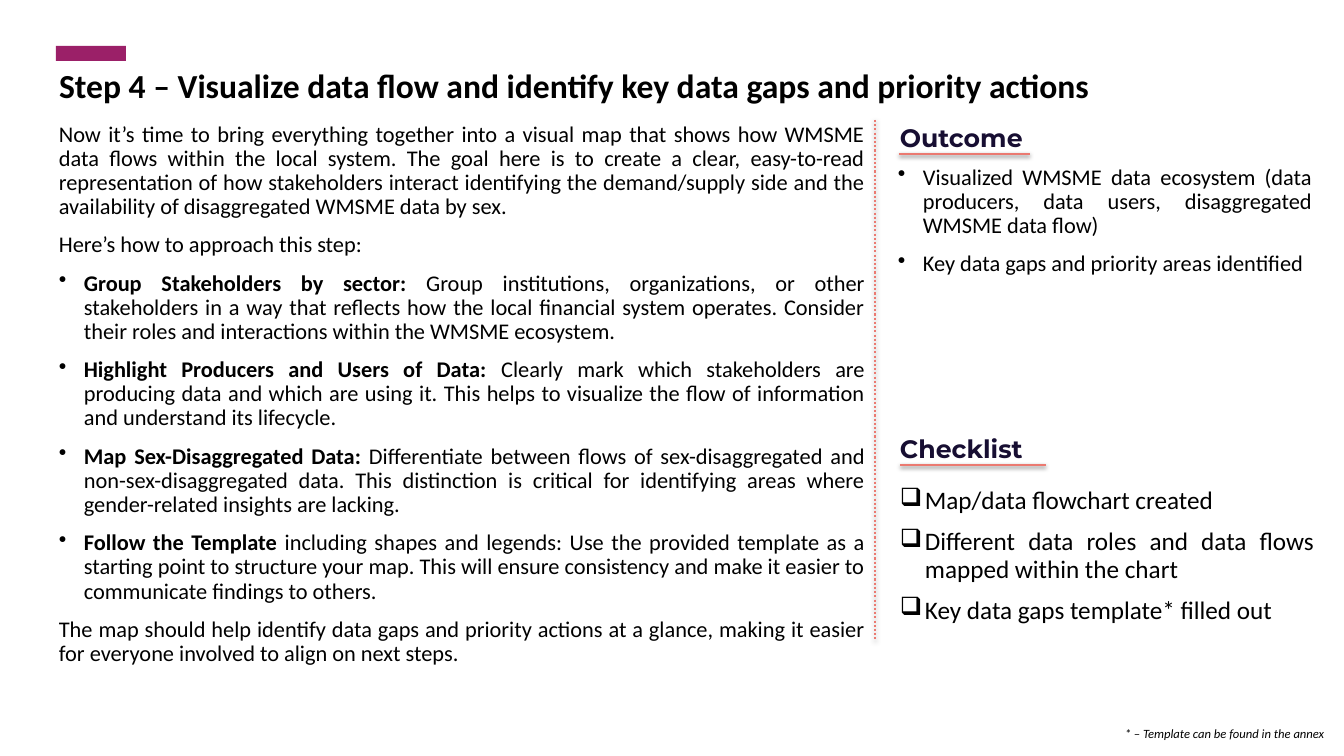
"""Build the Step 4 slide on visualizing data flow and identifying data gaps."""
from lxml.etree import SubElement
from pptx import Presentation
from pptx.dml.color import RGBColor
from pptx.enum.dml import MSO_LINE
from pptx.enum.shapes import MSO_CONNECTOR, MSO_SHAPE
from pptx.enum.text import MSO_ANCHOR, MSO_AUTO_SIZE, PP_ALIGN
from pptx.oxml.ns import qn
from pptx.util import Emu, Pt

EMU_PER_PX = 914400 / 100.8
INDENT = 25
BLACK, NAVY, CORAL, PLUM = "000000", "170E32", "EB7A71", "9B2068"

TITLE = "Step 4 – Visualize data flow and identify key data gaps and priority actions"
STEPS = [
    ("", "", "Now it’s time to bring everything together into a visual map that shows "
     "how WMSME data flows within the local system. The goal here is to create a clear, "
     "easy-to-read representation of how stakeholders interact identifying the "
     "demand/supply side and the availability of disaggregated WMSME data by sex."),
    ("", "", "Here’s how to approach this step:"),
    ("•", "Group Stakeholders by sector:", " Group institutions, organizations, or other "
     "stakeholders in a way that reflects how the local financial system operates. "
     "Consider their roles and interactions within the WMSME ecosystem."),
    ("•", "Highlight Producers and Users of Data:", " Clearly mark which stakeholders are "
     "producing data and which are using it. This helps to visualize the flow of "
     "information and understand its lifecycle."),
    ("•", "Map Sex-Disaggregated Data:", " Differentiate between flows of "
     "sex-disaggregated and non-sex-disaggregated data. This distinction is critical for "
     "identifying areas where gender-related insights are lacking."),
    ("•", "Follow the Template", " including shapes and legends: Use the provided template "
     "as a starting point to structure your map. This will ensure consistency and make it "
     "easier to communicate findings to others."),
    ("", "", "The map should help identify data gaps and priority actions at a glance, "
     "making it easier for everyone involved to align on next steps."),
]
OUTCOMES = [
    ("•", "", "Visualized WMSME data ecosystem (data producers, data users, "
     "disaggregated WMSME data flow)"),
    ("•", "", "Key data gaps and priority areas identified"),
]
CHECKS = [
    ("❑", "", "Map/data flowchart created"),
    ("❑", "", "Different data roles and data flows mapped within the chart"),
    ("❑", "", "Key data gaps template* filled out"),
]


def px(n):
    """Turn pixels into EMU."""
    return Emu(round(n * EMU_PER_PX))


def rgb(color):
    """Turn a hex string into a colour."""
    return RGBColor.from_string(color)


def style(font, size, color=BLACK, name="Calibri", bold=False, italic=False):
    """Format a font."""
    font.name, font.size, font.bold, font.italic = name, Pt(size), bold, italic
    font.color.rgb = rgb(color)


def add_bullet(p, char):
    """Give a paragraph a hanging bullet."""
    pPr = p._p.get_or_add_pPr()
    pPr.set("marL", str(px(INDENT)))
    pPr.set("indent", str(-px(INDENT)))
    SubElement(pPr, qn("a:buChar")).set("char", char)


def add_box(s, x, y, w, h):
    """Add a wrapping text box and return its text frame."""
    tf = s.shapes.add_textbox(px(x), px(y), px(w), px(h)).text_frame
    tf.word_wrap = True
    return tf


def add_paragraphs(s, x, y, w, h, items, size):
    """Add justified paragraphs, each with a bullet, bold lead and text."""
    tf = add_box(s, x, y, w, h)
    for i, (char, lead, text) in enumerate(items):
        p = tf.paragraphs[0] if i == 0 else tf.add_paragraph()
        if char:
            add_bullet(p, char)
        p.alignment = PP_ALIGN.JUSTIFY
        p.line_spacing = 0.9
        p.space_before = Pt(10 if i else 0)
        for part, bold in ((lead, True), (text, False)):
            if part:
                r = p.add_run()
                r.text = part
                style(r.font, size, bold=bold)


def add_line(s, x1, y1, x2, y2, width, dash=None):
    """Add a coral line with a soft shadow."""
    line = s.shapes.add_connector(MSO_CONNECTOR.STRAIGHT, px(x1), px(y1), px(x2), px(y2))
    line.line.color.rgb = rgb(CORAL)
    line.line.width = Pt(width)
    if dash:
        line.line.dash_style = dash
    effects = SubElement(line._element.spPr, qn("a:effectLst"))
    shadow = SubElement(effects, qn("a:outerShdw"), blurRad=str(Pt(3.1)),
                        dist=str(Pt(1.6)), dir="5400000", rotWithShape="0")
    black = SubElement(shadow, qn("a:srgbClr"), val=BLACK)
    SubElement(black, qn("a:alpha"), val="38000")


def add_heading(s, y, text, x1, x2):
    """Add a side heading with its underline."""
    tf = add_box(s, 890, y, 201, 39)
    tf.vertical_anchor = MSO_ANCHOR.MIDDLE
    tf.text = text
    style(tf.paragraphs[0].runs[0].font, 18, NAVY, "Montserrat", bold=True)
    add_line(s, x1, y + 36, x2, y + 36, 2)


def add_title(s):
    """Place and format the title."""
    sp = s.shapes.title
    sp.left, sp.top, sp.width, sp.height = px(49), px(62), px(1108), px(51)
    tf = sp.text_frame
    tf.text = TITLE
    tf.auto_size = MSO_AUTO_SIZE.NONE
    tf.vertical_anchor = MSO_ANCHOR.MIDDLE
    p = tf.paragraphs[0]
    p.alignment = PP_ALIGN.LEFT
    p.line_spacing = 0.9
    style(p.runs[0].font, 24, bold=True)


def add_accent(s):
    """Add the bar above the title."""
    sp = s.shapes.add_shape(MSO_SHAPE.RECTANGLE, px(56), px(46), px(70), px(15))
    sp.shadow.inherit = False
    sp.fill.solid()
    sp.fill.fore_color.rgb = rgb(PLUM)
    sp.line.fill.background()


def add_footnote(s):
    """Add the right-aligned note at the foot."""
    tf = add_box(s, 233, 721, 1101, 25)
    tf.text = "* – Template can be found in the annex"
    p = tf.paragraphs[0]
    p.alignment = PP_ALIGN.RIGHT
    style(p.runs[0].font, 9, italic=True)


def main():
    """Build and save the slide."""
    prs = Presentation()
    prs.slide_width, prs.slide_height = px(1344), px(756)
    s = prs.slides.add_slide(prs.slide_layouts[5])
    add_accent(s)
    add_title(s)
    add_paragraphs(s, 49, 118, 826, 558, STEPS, 16)
    add_line(s, 875, 120, 875, 641, 1.5, MSO_LINE.ROUND_DOT)
    add_heading(s, 118, "Outcome", 899, 1030)
    add_paragraphs(s, 888, 161, 434, 238, OUTCOMES, 16)
    add_heading(s, 429, "Checklist", 900, 1046)
    add_paragraphs(s, 890, 483, 434, 238, CHECKS, 18)
    add_footnote(s)
    prs.save("out.pptx")


if __name__ == "__main__":
    main()
